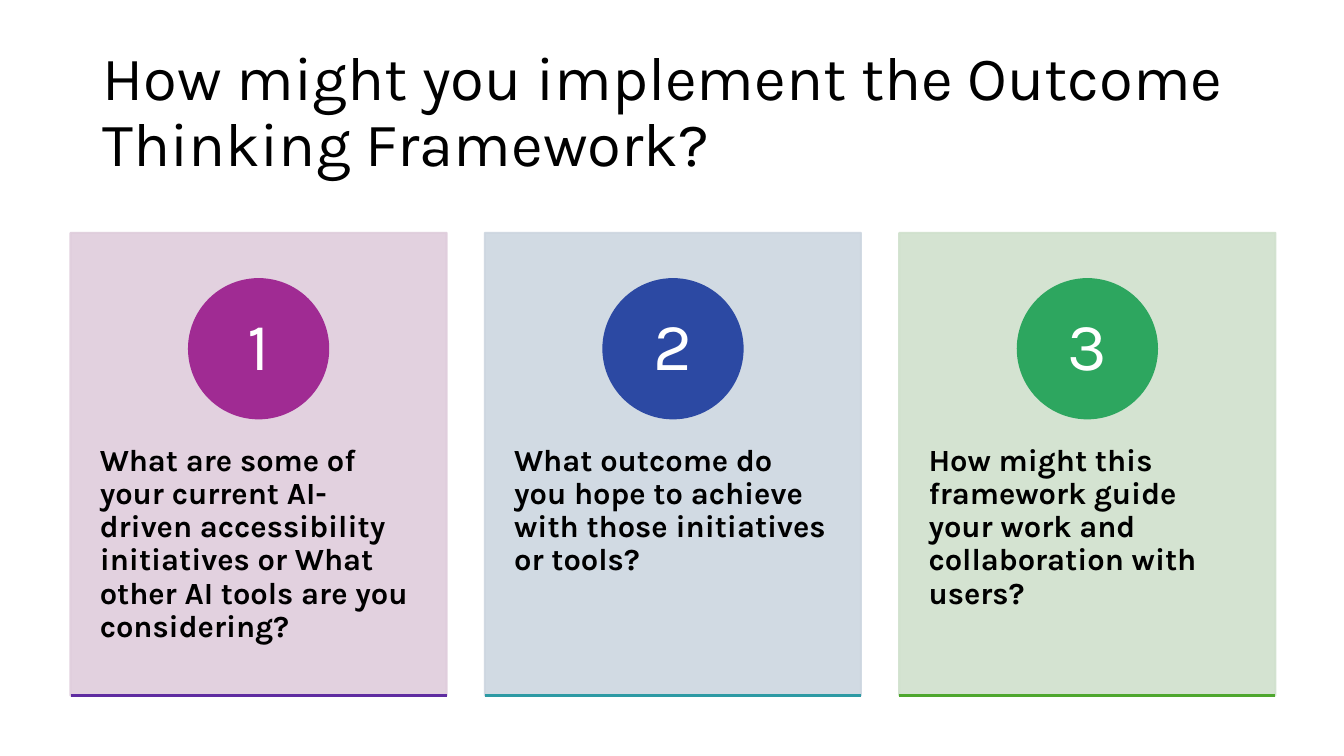
from dataclasses import dataclass

from lxml.etree import SubElement
from pptx import Presentation
from pptx.dml.color import RGBColor
from pptx.enum.shapes import MSO_CONNECTOR, MSO_SHAPE
from pptx.enum.text import MSO_ANCHOR, MSO_AUTO_SIZE, PP_ALIGN
from pptx.oxml.ns import qn
from pptx.util import Pt


@dataclass(frozen=True)
class Theme:
    font: str = "Karla"
    dark: str = "000000"
    light: str = "FFFFFF"
    title_size: int = 44
    number_size: int = 48
    question_size: int = 22
    line_width: float = 1.5
    # Card, circle and base line of each column
    columns: tuple = (
        ("DFCDDC", "A02B93", "5F2CA1"),
        ("CDD6E0", "2C49A3", "2D9AA4"),
        ("D0E1CD", "2DA65F", "4EA72E"),
    )


THEME = Theme()
QUESTIONS = (
    "What are some of your current AI-driven accessibility initiatives or What other AI tools are you considering?",
    "What outcome do you hope to achieve with those initiatives or tools?",
    "How might this framework guide your work and collaboration with users?",
)
CARD_LEFT, CARD_TOP, CARD_WIDTH, CARD_HEIGHT = 50.4, 166.3, 268.6, 330.5
CARD_STEP = 296
CIRCLE_TOP, CIRCLE_SIZE = 199.4, 99.4
QUESTION_TOP, QUESTION_HEIGHT = 291.6, 198


def write_text(shape, text, *, size, color=THEME.dark, bold=False,
               align=PP_ALIGN.LEFT, anchor=MSO_ANCHOR.MIDDLE, margins=(7.2, 3.6)):
    """Fill the shape with one paragraph; margins are (horizontal, vertical)."""
    frame = shape.text_frame
    frame.word_wrap = True
    frame.auto_size = MSO_AUTO_SIZE.NONE
    frame.vertical_anchor = anchor
    frame.margin_left = frame.margin_right = Pt(margins[0])
    frame.margin_top = frame.margin_bottom = Pt(margins[1])
    paragraph = frame.paragraphs[0]
    paragraph.alignment = align
    paragraph.line_spacing = 0.9
    run = paragraph.add_run()
    run.text = text
    run.font.name = THEME.font
    run.font.size = Pt(size)
    run.font.bold = bold
    run.font.color.rgb = RGBColor.from_string(color)


def add_filled_shape(slide, kind, left, top, width, height, color, opacity=100):
    shape = slide.shapes.add_shape(kind, Pt(left), Pt(top), Pt(width), Pt(height))
    shape.shadow.inherit = False
    shape.line.width = Pt(THEME.line_width)
    for fill in (shape.fill, shape.line.fill):
        fill.solid()
        fill.fore_color.rgb = RGBColor.from_string(color)
    if opacity < 100:
        for color_element in shape.element.spPr.iter(qn("a:srgbClr")):
            SubElement(color_element, qn("a:alpha"), val=str(opacity * 1000))
    return shape


presentation = Presentation()
presentation.slide_width, presentation.slide_height = Pt(960), Pt(540)
slide = presentation.slides.add_slide(presentation.slide_layouts[5])

title = slide.shapes.title
title.left, title.top, title.width, title.height = Pt(66), Pt(28.75), Pt(828), Pt(104.4)
write_text(title, "How might you implement the Outcome Thinking Framework?", size=THEME.title_size)

for index, (question, colors) in enumerate(zip(QUESTIONS, THEME.columns)):
    card_color, circle_color, line_color = colors
    left = CARD_LEFT + index * CARD_STEP
    add_filled_shape(slide, MSO_SHAPE.RECTANGLE, left, CARD_TOP, CARD_WIDTH, CARD_HEIGHT,
                     card_color, opacity=90)

    question_box = slide.shapes.add_textbox(
        Pt(left), Pt(QUESTION_TOP), Pt(CARD_WIDTH), Pt(QUESTION_HEIGHT))
    write_text(question_box, question, size=THEME.question_size, bold=True,
               anchor=MSO_ANCHOR.TOP, margins=(20.9, 25.9))

    circle_left = left + (CARD_WIDTH - CIRCLE_SIZE) / 2
    circle = add_filled_shape(slide, MSO_SHAPE.OVAL, circle_left, CIRCLE_TOP,
                              CIRCLE_SIZE, CIRCLE_SIZE, circle_color)
    write_text(circle, str(index + 1), size=THEME.number_size, color=THEME.light,
               align=PP_ALIGN.CENTER, margins=(0, 0))

    base = CARD_TOP + CARD_HEIGHT
    base_line = slide.shapes.add_connector(
        MSO_CONNECTOR.STRAIGHT, Pt(left), Pt(base), Pt(left + CARD_WIDTH), Pt(base))
    base_line.line.width = Pt(THEME.line_width)
    base_line.line.color.rgb = RGBColor.from_string(line_color)
    SubElement(base_line.element.spPr, qn("a:effectLst"))

presentation.save("out.pptx")
